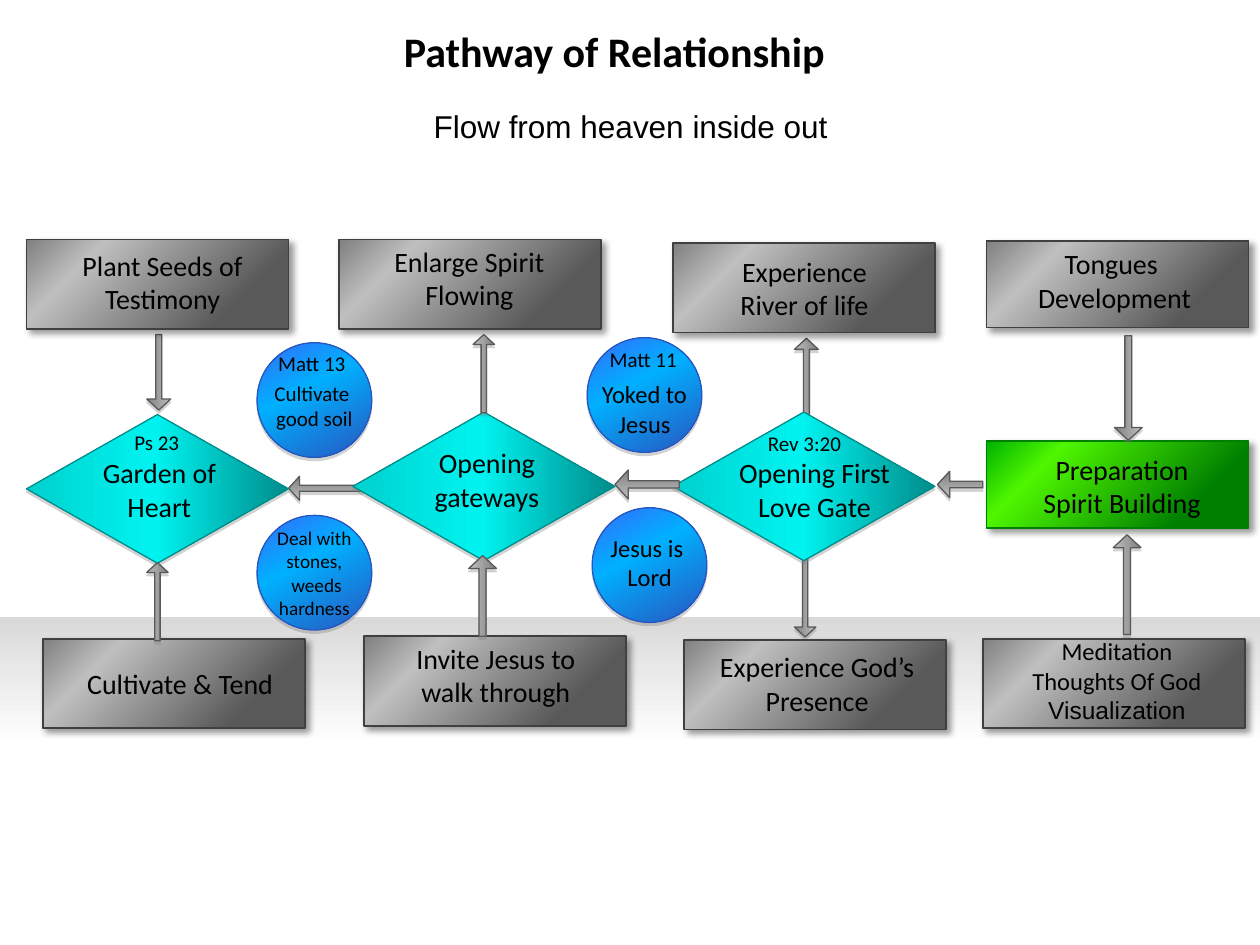
"""Build the "Pathway of Relationship" flow diagram slide."""
from lxml import etree
from pptx import Presentation
from pptx.dml.color import RGBColor
from pptx.enum.shapes import MSO_SHAPE
from pptx.enum.text import MSO_AUTO_SIZE, PP_ALIGN
from pptx.oxml.ns import qn
from pptx.util import Inches, Pt

BLACK = RGBColor(0x00, 0x00, 0x00)
WHITE = RGBColor(0xFF, 0xFF, 0xFF)
FLOOR_GREY = RGBColor(0xD9, 0xD9, 0xD9)
CHARCOAL = RGBColor(0x40, 0x40, 0x40)
DARK_GREY = RGBColor(0x59, 0x59, 0x59)
STEEL = RGBColor(0x7F, 0x7F, 0x7F)
MID_GREY = RGBColor(0x80, 0x80, 0x80)
SILVER = RGBColor(0xBF, 0xBF, 0xBF)
GREEN = RGBColor(0x00, 0x80, 0x00)
LIME = RGBColor(0x4F, 0xF6, 0x00)
LEAF = RGBColor(0x00, 0xB3, 0x00)
TURQUOISE = RGBColor(0x00, 0xD1, 0xCF)
AQUA = RGBColor(0x00, 0xF3, 0xF0)
TEAL = RGBColor(0x00, 0x8C, 0x8B)
ROYAL = RGBColor(0x33, 0x6F, 0xFA)
SKY = RGBColor(0x00, 0xB0, 0xFF)
NAVY = RGBColor(0x28, 0x56, 0xBF)

FLOOR_STOPS = [(0, WHITE), (61, WHITE), (100, FLOOR_GREY)]
CARD_STOPS = [(22, DARK_GREY), (77, SILVER), (100, MID_GREY)]
GREEN_STOPS = [(22, GREEN), (77, LIME), (100, LEAF)]
ARROW_STOPS = [(0, SILVER), (100, STEEL)]
GATE_STOPS = [(0, TURQUOISE), (49, AQUA), (100, TEAL)]
CIRCLE_STOPS = [(0, ROYAL), (2, ROYAL), (40, SKY), (100, NAVY)]
CARD_SHADOW = (BLACK, 40, 4, 3, 45)
SOFT_SHADOW = (MID_GREY, 35, 0, 1.8, 90)
RIGHT, DOWN, LEFT, UP = 0, 90, 180, 270


def add_color(parent, color):
    return etree.SubElement(parent, qn("a:srgbClr"), val=str(color))


def set_gradient(shape, stops, angle):
    shape.fill.gradient()
    gradient = shape._element.spPr.find(qn("a:gradFill"))
    gradient.set("rotWithShape", "1")
    for child in list(gradient):
        gradient.remove(child)
    stop_list = etree.SubElement(gradient, qn("a:gsLst"))
    for position, color in stops:
        add_color(etree.SubElement(stop_list, qn("a:gs"), pos=str(position * 1000)), color)
    etree.SubElement(gradient, qn("a:lin"), ang=str(angle * 60000), scaled="0")


def set_shadow(shape, color, opacity, blur, distance, angle):
    shape.shadow.inherit = False
    effects = shape._element.spPr.find(qn("a:effectLst"))
    shadow = etree.SubElement(
        effects, qn("a:outerShdw"), blurRad=str(Pt(blur)), dist=str(Pt(distance)),
        dir=str(angle * 60000), algn="ctr", rotWithShape="0")
    etree.SubElement(add_color(shadow, color), qn("a:alpha"), val=str(opacity * 1000))


def add_figure(slide, preset, place, stops, angle, outline, width, shadow):
    figure = slide.shapes.add_shape(preset, *map(Inches, place))
    set_gradient(figure, stops, angle)
    figure.line.color.rgb = outline
    figure.line.width = Pt(width)
    set_shadow(figure, *shadow)
    return figure


def add_floor(slide):
    floor = slide.shapes.add_shape(
        MSO_SHAPE.RECTANGLE, *map(Inches, (0, 4.9, 10, 2.6)))
    set_gradient(floor, FLOOR_STOPS, UP)
    floor.line.fill.background()
    floor.shadow.inherit = False


def add_card(slide, left, top, height=0.71, stops=CARD_STOPS, outline=CHARCOAL):
    add_figure(slide, MSO_SHAPE.RECTANGLE, (left, top, 2.08, height),
               stops, 225, outline, 1, CARD_SHADOW)


def add_gate(slide, left, top):
    add_figure(slide, MSO_SHAPE.DIAMOND, (left, top, 2.08, 1.18),
               GATE_STOPS, 0, TEAL, 0.75, SOFT_SHADOW)


def add_circle(slide, left, top):
    add_figure(slide, MSO_SHAPE.OVAL, (left, top, 0.91, 0.91),
               CIRCLE_STOPS, 61, NAVY, 0.75, SOFT_SHADOW)


def add_arrow(slide, direction, *place):
    arrow = add_figure(slide, MSO_SHAPE.RIGHT_ARROW, place,
                       ARROW_STOPS, 90, DARK_GREY, 0.75, SOFT_SHADOW)
    arrow.adjustments[0] = 0.25
    arrow.adjustments[1] = 0.46
    arrow.rotation = direction


def add_label(slide, text, place, size=16, font="Calibri", bold=False,
              tight=False, wrap=True):
    frame = slide.shapes.add_textbox(*map(Inches, place)).text_frame
    frame.word_wrap = wrap
    frame.auto_size = MSO_AUTO_SIZE.SHAPE_TO_FIT_TEXT
    if tight:
        frame.margin_left = frame.margin_right = 0
        frame.margin_top = frame.margin_bottom = 0
    paragraph = frame.paragraphs[0]
    paragraph.text = text
    paragraph.alignment = PP_ALIGN.CENTER
    paragraph.font.size = Pt(size)
    paragraph.font.name = font
    paragraph.font.bold = bold
    paragraph.font.color.rgb = BLACK
    return paragraph


def add_preparation(slide):
    add_card(slide, 7.83, 1.91, 0.69)
    add_card(slide, 7.83, 3.5, 0.69, GREEN_STOPS, GREEN)
    add_label(slide, "Preparation\nSpirit Building", (8.12, 3.54, 1.57, 0.63))
    add_arrow(slide, UP, 8.55, 4.53, 0.79, 0.22)
    add_card(slide, 7.8, 5.07)
    meditation = add_label(slide, "Meditation\nThoughts Of God\n", (7.95, 5, 1.83, 0.79), 14)
    visualization = meditation.add_run()
    visualization.text = "Visualization"
    visualization.font.name = "Arial"
    add_arrow(slide, DOWN, 8.54, 2.97, 0.83, 0.22)
    add_label(slide, "Tongues \nDevelopment", (7.87, 1.91, 1.95, 0.64))


def add_love_gate(slide):
    add_arrow(slide, DOWN, 6.08, 4.66, 0.62, 0.17)
    add_arrow(slide, UP, 6.09, 2.9, 0.62, 0.19)
    add_gate(slide, 5.34, 3.27)
    add_card(slide, 5.34, 1.93)
    add_label(slide, "Rev 3:20", (5.97, 3.42, 0.83, 0.2), 12, tight=True)
    add_label(slide, "Experience River of life", (5.6, 1.97, 1.57, 0.64))
    add_label(slide, "Opening First Love Gate", (5.68, 3.57, 1.57, 0.64))
    add_card(slide, 5.43, 5.08)
    add_label(slide, "Experience God’s Presence", (5.57, 5.11, 1.83, 0.64))


def add_garden(slide):
    add_gate(slide, 0.21, 3.29)
    add_arrow(slide, DOWN, 0.96, 2.86, 0.6, 0.19)
    add_card(slide, 0.34, 5.07)
    add_label(slide, "Cultivate & Tend", (0.51, 5.24, 1.84, 0.37))
    add_label(slide, "Garden of Heart", (0.48, 3.57, 1.57, 0.64))
    add_card(slide, 0.21, 1.9)
    add_label(slide, "Plant Seeds of\nTestimony", (0.37, 1.92, 1.84, 0.64))
    add_label(slide, "Ps 23", (0.83, 3.41, 0.83, 0.2), 12, tight=True)
    add_arrow(slide, UP, 0.94, 4.69, 0.62, 0.17)


def add_gateways(slide):
    add_card(slide, 2.89, 5.05)
    add_label(slide, "Invite Jesus to walk through", (3.15, 5.04, 1.57, 0.64))
    add_gate(slide, 2.8, 3.27)
    add_label(slide, "Opening gateways", (3.08, 3.49, 1.57, 0.64))
    add_card(slide, 2.69, 1.9)
    add_label(slide, "Enlarge Spirit\nFlowing", (2.94, 1.89, 1.57, 0.64))
    add_arrow(slide, UP, 3.53, 2.88, 0.62, 0.17)
    add_arrow(slide, UP, 3.51, 4.62, 0.64, 0.22)


def add_scriptures(slide):
    for left, top in [(4.66, 2.68), (4.7, 4.03), (2.04, 4.09), (2.04, 2.72)]:
        add_circle(slide, left, top)
    add_label(slide, "Yoked to Jesus", (4.61, 3.01, 1.01, 0.47), 14, tight=True)
    add_label(slide, "Jesus is \nLord", (4.65, 4.18, 1.01, 0.57), 14)
    add_label(slide, "Matt 11", (4.69, 2.75, 0.83, 0.2), 12, tight=True)
    add_label(slide, "Deal with stones,\n weeds hardness", (1.99, 4.18, 1.01, 0.74), 11, tight=True)
    add_label(slide, "Cultivate \ngood soil", (1.99, 3.02, 1.01, 0.4), 12, tight=True)
    add_label(slide, "Matt 13", (2.06, 2.78, 0.83, 0.2), 12, tight=True)


def main():
    deck = Presentation()
    deck.slide_width, deck.slide_height = Inches(10), Inches(7.5)
    slide = deck.slides.add_slide(deck.slide_layouts[6])
    add_floor(slide)
    add_label(slide, "Pathway of Relationship", (2.83, 0.15, 4.09, 0.5), 24, bold=True)
    add_preparation(slide)
    add_love_gate(slide)
    add_arrow(slide, LEFT, 4.88, 3.73, 0.51, 0.23)
    add_arrow(slide, LEFT, 2.29, 3.78, 0.59, 0.19)
    add_arrow(slide, LEFT, 7.44, 3.74, 0.36, 0.21)
    add_garden(slide)
    add_gateways(slide)
    add_scriptures(slide)
    add_label(slide, "Flow from heaven inside out", (3.29, 0.8, 3.43, 0.4), 18, "Arial", wrap=False)
    deck.save("out.pptx")


if __name__ == "__main__":
    main()
